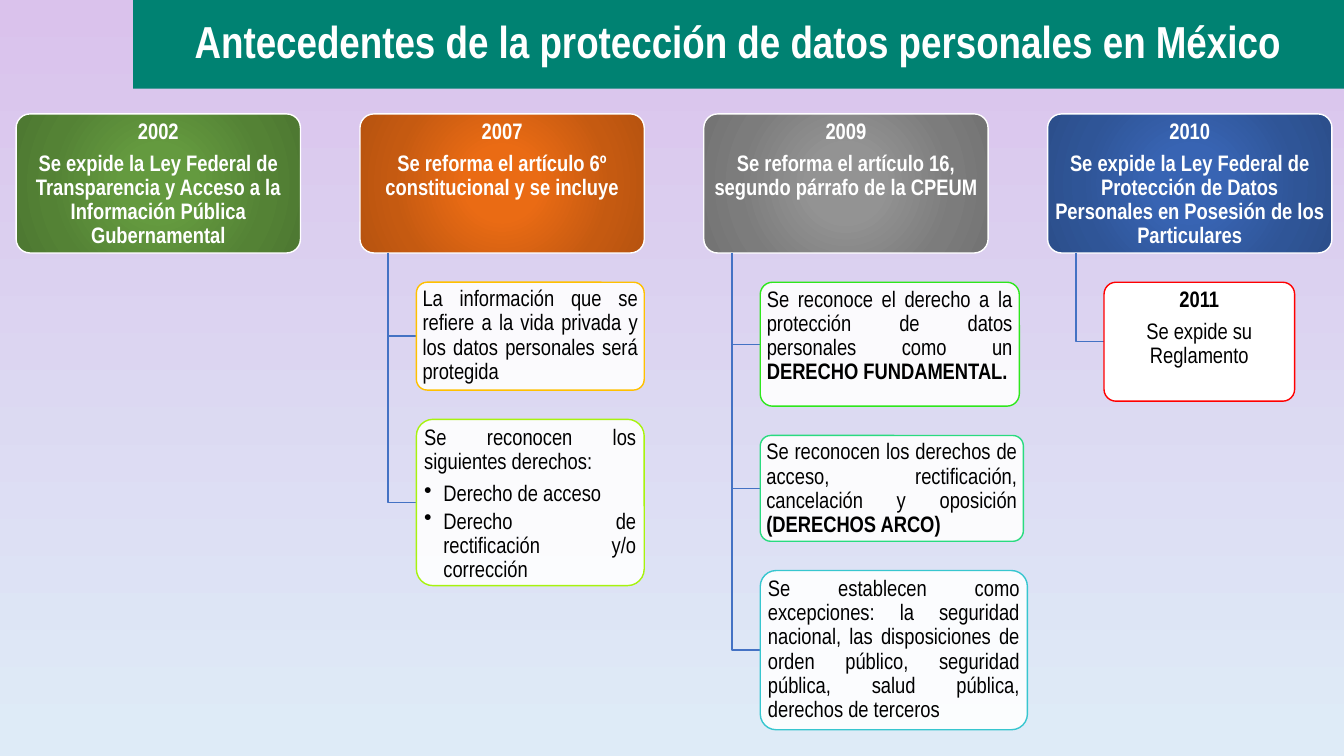
from dataclasses import dataclass

from pptx import Presentation
from pptx.dml.color import RGBColor
from pptx.enum.shapes import MSO_SHAPE
from pptx.enum.text import MSO_ANCHOR, PP_ALIGN
from pptx.oxml import parse_xml
from pptx.oxml.ns import nsdecls, qn
from pptx.util import Inches, Pt

RECTANGLE, ROUNDED = MSO_SHAPE.RECTANGLE, MSO_SHAPE.ROUNDED_RECTANGLE
TOP, MIDDLE = MSO_ANCHOR.TOP, MSO_ANCHOR.MIDDLE
CENTER, JUSTIFY = PP_ALIGN.CENTER, PP_ALIGN.JUSTIFY

SLIDE_WIDTH, SLIDE_HEIGHT = 13.33, 7.5
FIRST_LEFT, COLUMN_STEP = 0.16, 3.41
HEAD_TOP, HEAD_WIDTH, HEAD_HEIGHT = 1.13, 2.82, 1.38
HEAD_BOTTOM = HEAD_TOP + HEAD_HEIGHT
BRANCH_INDENT, BRANCH_GAP = 0.28, 0.29


@dataclass(frozen=True)
class Theme:
    """Colours, font and type sizes of the slide."""
    font: str = "Arial Narrow"
    title_size: int = 32
    body_size: int = 16
    backdrop_top: str = "DAC2EC"
    backdrop_bottom: str = "DEEBF7"
    banner: str = "008272"
    light: str = "FFFFFF"
    dark: str = "000000"
    branch: str = "4472C4"
    green: tuple = ("649A3F", "548235", "4E7932")
    orange: tuple = ("EA6B14", "C55A11", "B85410")
    gray: tuple = ("939393", "7C7C7C", "747474")
    blue: tuple = ("3864B3", "2F5597", "2C4F8C")
    amber: str = "FFC000"
    lime: str = "A7F30E"
    leaf: str = "2EE71C"
    mint: str = "29DB80"
    cyan: str = "37C6CF"
    red: str = "FF0000"


@dataclass(frozen=True)
class Para:
    """A paragraph with an optional bold ending or bullet."""
    text: str
    bold: bool = False
    ending: str = ""
    bullet: bool = False


@dataclass(frozen=True)
class Detail:
    """A box that hangs from a year."""
    width: float
    height: float
    border: str
    paras: tuple
    align: PP_ALIGN = JUSTIFY
    opacity: int = 90


class Timeline:
    """Draws the elements of the timeline on one slide."""

    def __init__(self, slide, theme):
        self.slide, self.theme = slide, theme

    def backdrop(self):
        """Fill the background from top to bottom."""
        fill = self.slide.background.fill
        fill.gradient()
        fill.gradient_angle = 270
        colors = (self.theme.backdrop_top, self.theme.backdrop_bottom)
        for stop, color, position in zip(fill.gradient_stops, colors, (0, 0.98)):
            stop.color.rgb = RGBColor.from_string(color)
            stop.position = position

    def box(self, kind, left, top, width, height, fill, border=None):
        """Add a box without shadow."""
        box = self.slide.shapes.add_shape(
            kind, Inches(left), Inches(top), Inches(width), Inches(height))
        box.shadow.inherit = False
        box.fill.solid()
        box.fill.fore_color.rgb = RGBColor.from_string(fill)
        if border:
            box.adjustments[0] = 0.1
            box.line.color.rgb = RGBColor.from_string(border)
            box.line.width = Pt(1)
        else:
            box.line.fill.background()
        return box

    def label(self, box, paras, color, size, align, anchor=TOP):
        """Set paragraphs inside a box."""
        frame = box.text_frame
        frame.word_wrap = True
        frame.vertical_anchor = anchor
        frame.margin_left = frame.margin_right = Inches(0.03)
        frame.margin_top = frame.margin_bottom = Inches(0.02)
        for index, para in enumerate(paras):
            line = frame.add_paragraph() if index else frame.paragraphs[0]
            line.text = para.text
            line.alignment = align
            line.line_spacing = 0.9
            line.space_after = Pt(2.4 if para.bullet else 5.6)
            if para.bullet:
                self.bullet(line)
            if para.ending:
                line.add_run().text = para.ending
            for position, run in enumerate(line.runs):
                run.font.name = self.theme.font
                run.font.size = Pt(size)
                run.font.bold = para.bold or position > 0
                run.font.color.rgb = RGBColor.from_string(color)

    def bullet(self, line):
        """Give a paragraph a hanging bullet."""
        line.level = 1
        properties = line._p.get_or_add_pPr()
        properties.set("marL", str(Inches(0.19)))
        properties.set("indent", str(Inches(-0.19)))
        properties.append(parse_xml(f'<a:buChar {nsdecls("a")} char="•"/>'))

    def banner(self, text):
        """Add the title banner."""
        box = self.box(RECTANGLE, 1.32, 0, 12.01, 0.88, self.theme.banner)
        self.label(box, (Para(text, bold=True),), self.theme.light,
                   self.theme.title_size, CENTER, MIDDLE)

    def year(self, left, year, event, shades):
        """Add a year box with a radial gradient."""
        box = self.box(ROUNDED, left, HEAD_TOP, HEAD_WIDTH, HEAD_HEIGHT,
                       shades[0], self.theme.light)
        center, middle, edge = shades
        stops = "".join(
            f'<a:gs pos="{percent * 1000}"><a:srgbClr val="{color}"/></a:gs>'
            for percent, color in ((0, center), (23, center), (69, middle), (97, edge)))
        solid = box._element.spPr.find(qn("a:solidFill"))
        solid.getparent().replace(solid, parse_xml(
            f'<a:gradFill {nsdecls("a")} rotWithShape="1"><a:gsLst>{stops}</a:gsLst>'
            '<a:path path="circle"><a:fillToRect l="50000" t="50000" r="50000" b="50000"/>'
            '</a:path></a:gradFill>'))
        self.label(box, (Para(year, bold=True), Para(event, bold=True)),
                   self.theme.light, self.theme.body_size, CENTER)

    def branch(self, left, end):
        """Add the elbow from a year down to a detail."""
        builder = self.slide.shapes.build_freeform(Inches(left), Inches(HEAD_BOTTOM))
        builder.add_line_segments(
            ((Inches(left), Inches(end)), (Inches(left + BRANCH_INDENT), Inches(end))),
            close=False)
        elbow = builder.convert_to_shape()
        elbow.shadow.inherit = False
        elbow.fill.background()
        elbow.line.color.rgb = RGBColor.from_string(self.theme.branch)
        elbow.line.width = Pt(1)

    def detail(self, left, top, detail):
        """Add a detail box and its branch."""
        self.branch(left + BRANCH_INDENT, top + detail.height / 2)
        box = self.box(ROUNDED, left + 2 * BRANCH_INDENT, top, detail.width,
                       detail.height, self.theme.light, detail.border)
        tint = box._element.spPr.find(f'{qn("a:solidFill")}/{qn("a:srgbClr")}')
        tint.append(parse_xml(f'<a:alpha {nsdecls("a")} val="{detail.opacity * 1000}"/>'))
        self.label(box, detail.paras, self.theme.dark, self.theme.body_size, detail.align)


def main():
    """Build and save the slide."""
    theme = Theme()
    deck = Presentation()
    deck.slide_width, deck.slide_height = Inches(SLIDE_WIDTH), Inches(SLIDE_HEIGHT)
    timeline = Timeline(deck.slides.add_slide(deck.slide_layouts[6]), theme)
    timeline.backdrop()
    timeline.banner("Antecedentes de la protección de datos personales en México")
    milestones = (
        ("2002", "Se expide la Ley Federal de Transparencia y Acceso a la Información "
         "Pública Gubernamental", theme.green, ()),
        ("2007", "Se reforma el artículo 6º constitucional y se incluye", theme.orange, (
            Detail(2.26, 1.07, theme.amber, (Para(
                "La información que se refiere a la vida privada y los datos personales "
                "será protegida"),)),
            Detail(2.26, 1.65, theme.lime, (
                Para("Se reconocen los siguientes derechos:"),
                Para("Derecho de acceso", bullet=True),
                Para("Derecho de rectificación y/o corrección", bullet=True))))),
        ("2009", "Se reforma el artículo 16, segundo párrafo de la CPEUM", theme.gray, (
            Detail(2.57, 1.23, theme.leaf, (Para(
                "Se reconoce el derecho a la protección de datos personales como un ",
                ending="DERECHO FUNDAMENTAL."),)),
            Detail(2.61, 1.05, theme.mint, (Para(
                "Se reconocen los derechos de acceso, rectificación, cancelación y oposición ",
                ending="(DERECHOS ARCO)"),)),
            Detail(2.65, 1.58, theme.cyan, (Para(
                "Se establecen como excepciones: la seguridad nacional, las disposiciones de "
                "orden público, seguridad pública, salud pública, derechos de terceros"),)))),
        ("2010", "Se expide la Ley Federal de Protección de Datos Personales en Posesión "
         "de los Particulares", theme.blue, (
            Detail(1.89, 1.18, theme.red, (
                Para("2011", bold=True), Para("Se expide su Reglamento")), CENTER, 100),)),
    )
    for column, (year, event, shades, details) in enumerate(milestones):
        left = FIRST_LEFT + column * COLUMN_STEP
        timeline.year(left, year, event, shades)
        top = HEAD_BOTTOM + BRANCH_GAP
        for detail in details:
            timeline.detail(left, top, detail)
            top += detail.height + BRANCH_GAP
    deck.save("out.pptx")


if __name__ == "__main__":
    main()
